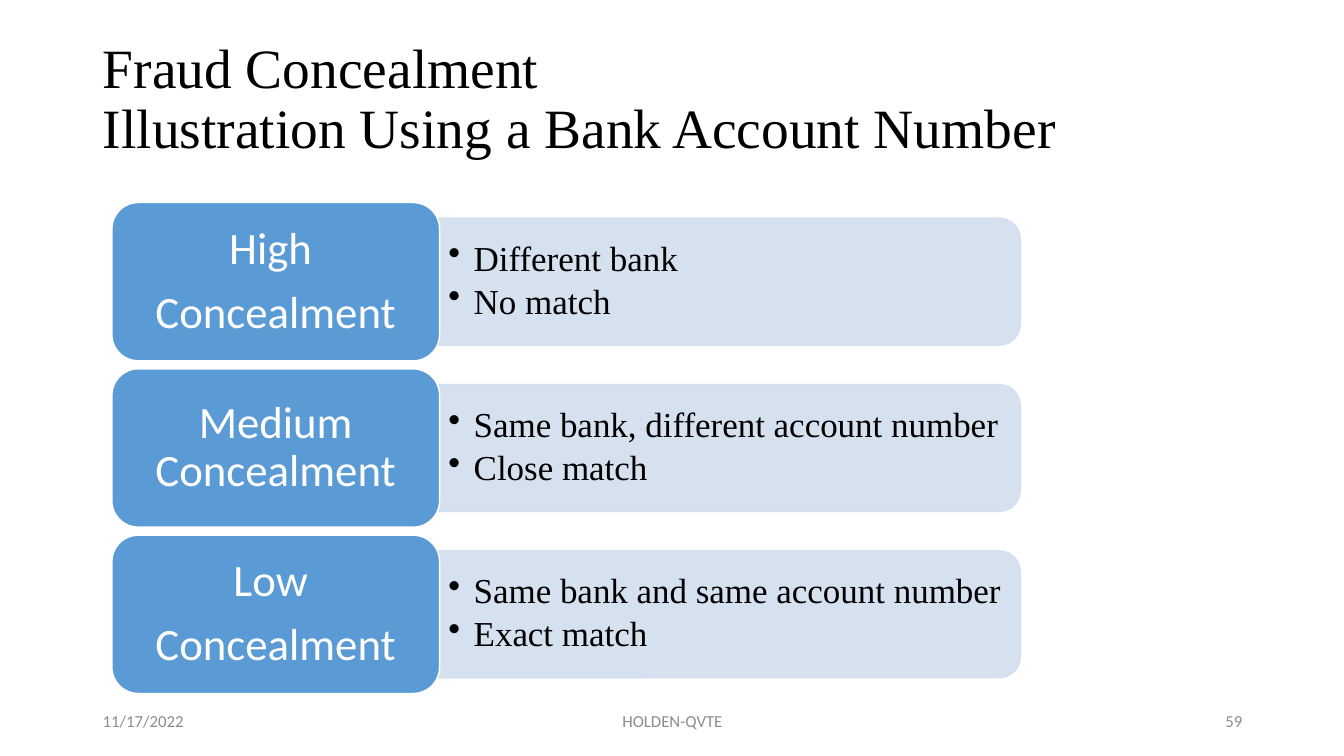
from lxml import etree
from pptx import Presentation
from pptx.dml.color import RGBColor
from pptx.enum.shapes import MSO_SHAPE
from pptx.enum.text import MSO_ANCHOR, MSO_AUTO_SIZE, PP_ALIGN
from pptx.oxml.ns import qn
from pptx.util import Inches, Pt

SERIF, SANS = "Times New Roman", "Calibri"
BLUE, PALE_BLUE, WHITE, BLACK, GRAY = "5B9BD5", "D2DEEF", "FFFFFF", "000000", "8C8C8C"

LEVELS = [
    (["High ", "Concealment"], ["Different bank", "No match"]),
    (["Medium Concealment"], ["Same bank, different account number", "Close match"]),
    (["Low ", "Concealment"], ["Same bank and same account number", "Exact match"]),
]
FOOTERS = [
    ("11/17/2022", 0.92, 3, PP_ALIGN.LEFT),
    ("HOLDEN-QVTE", 4.42, 4.5, PP_ALIGN.CENTER),
    ("59", 9.42, 3, PP_ALIGN.RIGHT),
]
FIRST_TOP, ROW_PITCH = 2.01, 1.65
CARD_LEFT, CARD_WIDTH, CARD_HEIGHT = 1.11, 3.25, 1.57
BAND_LEFT, BAND_WIDTH, BAND_HEIGHT = 4.35, 5.77, 1.26


def color(value):
    return RGBColor.from_string(value)


def write(shape, lines, font, size, text_color, align, line_spacing=1.0, space_after=0):
    frame = shape.text_frame
    frame.word_wrap = True
    frame.auto_size = MSO_AUTO_SIZE.NONE
    frame.vertical_anchor = MSO_ANCHOR.MIDDLE
    frame.text = "\n".join(lines)
    for paragraph in frame.paragraphs:
        paragraph.alignment = align
        paragraph.line_spacing = line_spacing
        paragraph.space_before = Pt(0)
        paragraph.space_after = Pt(space_after)
        paragraph.font.name = font
        paragraph.font.size = Pt(size)
        paragraph.font.color.rgb = color(text_color)


def add_box(slide, kind, left, top, width, height, fill, line):
    shape = slide.shapes.add_shape(
        kind, Inches(left), Inches(top), Inches(width), Inches(height))
    shape.shadow.inherit = False
    shape.fill.solid()
    shape.fill.fore_color.rgb = color(fill)
    shape.line.color.rgb = color(line)
    shape.line.width = Pt(1)
    return shape


def add_text(slide, left, top, width, height, lines, *style):
    box = slide.shapes.add_textbox(
        Inches(left), Inches(top), Inches(width), Inches(height))
    write(box, lines, *style)
    return box


def set_opacity(shape, percent):
    for element in shape.fill._xPr.iter(qn("a:srgbClr")):
        etree.SubElement(element, qn("a:alpha"), val=str(percent * 1000))


def add_bullets(box):
    for paragraph in box.text_frame.paragraphs:
        properties = paragraph._p.get_or_add_pPr()
        properties.set("marL", str(Inches(0.25)))
        properties.set("indent", str(Inches(-0.25)))
        bullet = etree.Element(qn("a:buChar"), char="•")
        properties.find(qn("a:defRPr")).addprevious(bullet)


def add_level(slide, top, heading, points):
    middle = top + CARD_HEIGHT / 2

    # Band, turned so that its rounded corners face right
    center = BAND_LEFT + BAND_WIDTH / 2
    band = add_box(slide, MSO_SHAPE.ROUND_2_SAME_RECTANGLE,
                   center - BAND_HEIGHT / 2, middle - BAND_WIDTH / 2,
                   BAND_HEIGHT, BAND_WIDTH, PALE_BLUE, PALE_BLUE)
    band.rotation = 90
    set_opacity(band, 90)
    points_box = add_text(slide, BAND_LEFT, middle - 0.57, BAND_WIDTH, 1.13,
                          points, SERIF, 25, BLACK, PP_ALIGN.LEFT, 0.9, 3.75)
    add_bullets(points_box)

    # Heading card
    card = add_box(slide, MSO_SHAPE.ROUNDED_RECTANGLE, CARD_LEFT, top,
                   CARD_WIDTH, CARD_HEIGHT, BLUE, WHITE)
    write(card, heading, SANS, 32, WHITE, PP_ALIGN.CENTER, 0.9, 11.2)


def add_title(slide):
    title = slide.shapes.title
    title.left, title.top = Inches(0.92), Inches(0.4)
    title.width, title.height = Inches(11.5), Inches(1.2)
    write(title, ["Fraud Concealment\vIllustration Using a Bank Account Number"],
          SERIF, 39.6, BLACK, PP_ALIGN.LEFT, 0.9)


def main():
    presentation = Presentation()
    presentation.slide_width, presentation.slide_height = Inches(13.33), Inches(7.5)
    slide = presentation.slides.add_slide(presentation.slide_layouts[5])
    add_title(slide)

    # Concealment levels
    for row, (heading, points) in enumerate(LEVELS):
        add_level(slide, FIRST_TOP + row * ROW_PITCH, heading, points)

    # Footer
    for text, left, width, align in FOOTERS:
        add_text(slide, left, 6.95, width, 0.4, [text], SANS, 12, GRAY, align)

    presentation.save("out.pptx")


if __name__ == "__main__":
    main()
